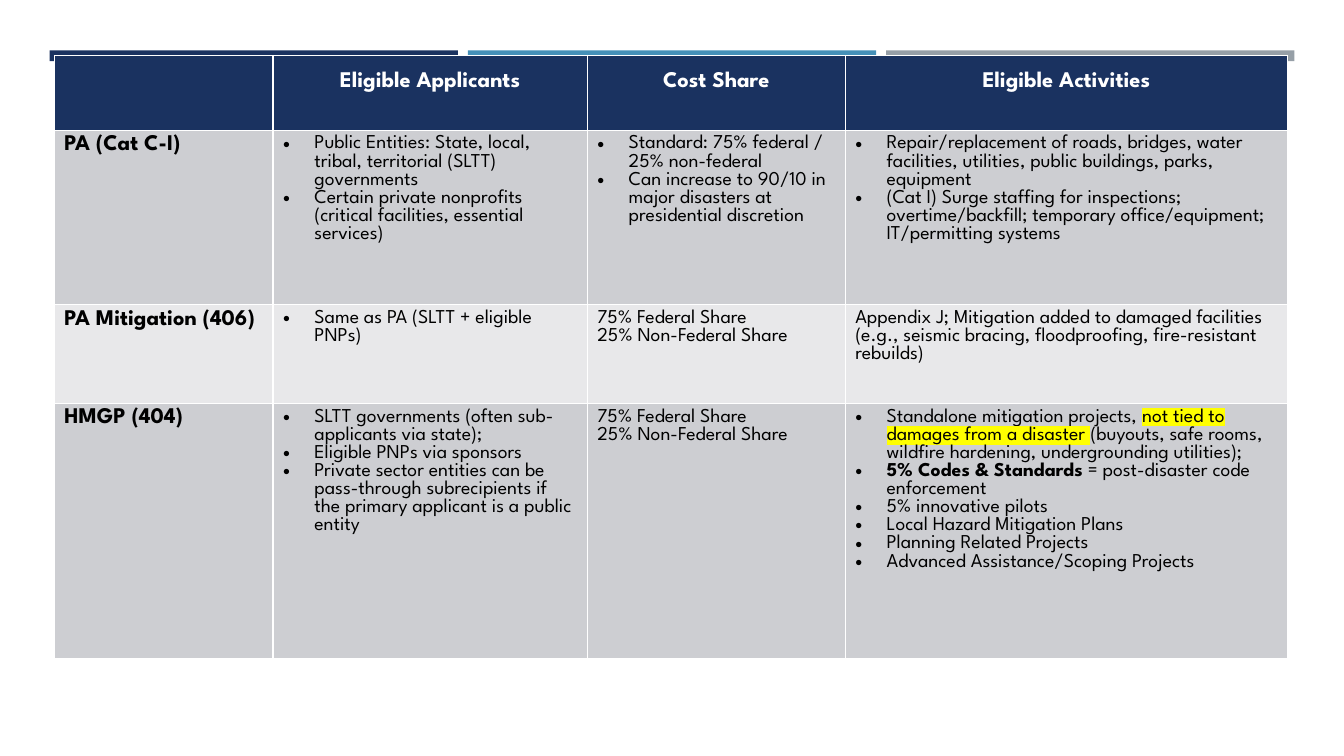
from lxml import etree
from pptx import Presentation
from pptx.dml.color import RGBColor
from pptx.enum import shapes, text
from pptx.oxml import ns
from pptx.util import Cm, Pt

NAVY = RGBColor(0x1A, 0x32, 0x60)
BLUE = RGBColor(0x45, 0x90, 0xB8)
GREY = RGBColor(0x96, 0x9F, 0xA7)
DARK = RGBColor(0xCD, 0xCE, 0xD2)
LIGHT = RGBColor(0xE8, 0xE8, 0xEA)
BLACK = RGBColor(0, 0, 0)
WHITE = RGBColor(255, 255, 255)
YELLOW = RGBColor(255, 255, 0)
FACE = "League Spartan"

HEAD = {"name": FACE, "size": Pt(16), "bold": True}
BODY = {"name": FACE, "size": Pt(14), "bold": False}


def add_run(para, words, form, color, mark=None):
    run = para.add_run()
    run.text = words
    for key, value in form.items():
        setattr(run.font, key, value)
    run.font.color.rgb = color
    if mark:
        light = etree.Element(ns.qn("a:highlight"))
        etree.SubElement(light, ns.qn("a:srgbClr"), val=str(mark))
        run.font._element.find(ns.qn("a:solidFill")).addnext(light)


def add_bullet(para):
    props = para._p.get_or_add_pPr()
    props.set("marL", str(Cm(0.79)))
    props.set("indent", str(-Cm(0.79)))
    etree.SubElement(props, ns.qn("a:buFont"), typeface="Arial")
    etree.SubElement(props, ns.qn("a:buChar"), char="•")


deck = Presentation()
deck.slide_width, deck.slide_height = Cm(33.87), Cm(19.05)
slide = deck.slides.add_slide(deck.slide_layouts[6])

# Bars along the top
for i, color in enumerate([NAVY, BLUE, GREY]):
    bar = slide.shapes.add_shape(
        shapes.MSO_SHAPE.RECTANGLE,
        Cm(1.25 + 10.54 * i), Cm(1.27), Cm(10.29), Cm(0.27))
    bar.shadow.inherit = False
    bar.fill.solid()
    bar.fill.fore_color.rgb = color
    bar.line.fill.background()

# Table content: a leading bullet marks a list item, a list holds styled runs
SHARE = ["75% Federal Share", "25% Non-Federal Share"]
TITLES = ["", "Eligible Applicants", "Cost Share", "Eligible Activities"]
ROWS = [
    ("PA (Cat C-I)",
     ["•Public Entities: State, local, tribal, territorial (SLTT) governments",
      "•Certain private nonprofits (critical facilities, essential services)"],
     ["•Standard: 75% federal / 25% non-federal",
      "•Can increase to 90/10 in major disasters at presidential discretion"],
     ["•Repair/replacement of roads, bridges, water facilities, utilities, "
      "public buildings, parks, equipment",
      "•(Cat I) Surge staffing for inspections; overtime/backfill; "
      "temporary office/equipment; IT/permitting systems"]),
    ("PA Mitigation (406)",
     ["•Same as PA (SLTT + eligible PNPs)"],
     SHARE,
     ["Appendix J; Mitigation added to damaged facilities (e.g., seismic "
      "bracing, floodproofing, fire-resistant rebuilds)"]),
    ("HMGP (404)",
     ["•SLTT governments (often sub-applicants via state);",
      "•Eligible PNPs via sponsors",
      "•Private sector entities can be pass-through subrecipients if the "
      "primary applicant is a public entity"],
     SHARE,
     [[("•Standalone mitigation projects, ", False, None),
       ("not tied to damages from a disaster ", False, YELLOW),
       ("(buyouts, safe rooms, wildfire hardening, undergrounding utilities);",
        False, None)],
      [("•5% Codes & Standards", True, None),
       (" = post-disaster code enforcement", False, None)],
      "•5% innovative pilots",
      "•Local Hazard Mitigation Plans",
      "•Planning Related Projects",
      "•Advanced Assistance/Scoping Projects"]),
]

# Table grid
wide = [5.51, 7.92, 6.5, 11.15]
high = [1.88, 4.39, 2.49, 6.43]
grid = slide.shapes.add_table(
    4, 4, Cm(1.37), Cm(1.4), Cm(sum(wide)), Cm(sum(high))).table
for col, size in zip(grid.columns, wide):
    col.width = Cm(size)
for row, size in zip(grid.rows, high):
    row.height = Cm(size)

# Header row
for c, title in enumerate(TITLES):
    cell = grid.cell(0, c)
    cell.fill.solid()
    cell.fill.fore_color.rgb = NAVY
    cell.vertical_anchor = text.MSO_ANCHOR.MIDDLE
    cell.margin_bottom = Cm(0.69)
    if title:
        para = cell.text_frame.paragraphs[0]
        para.alignment = text.PP_ALIGN.CENTER
        add_run(para, title, HEAD, WHITE)

# Body rows
for r, (name, *cells) in enumerate(ROWS, 1):
    for c, items in enumerate([[name], *cells]):
        cell = grid.cell(r, c)
        cell.fill.solid()
        cell.fill.fore_color.rgb = DARK if r % 2 else LIGHT
        frame = cell.text_frame
        for i, item in enumerate(items):
            para = frame.add_paragraph() if i else frame.paragraphs[0]
            runs = [(item, c == 0, None)] if isinstance(item, str) else item
            if runs[0][0].startswith("•"):
                add_bullet(para)
            for words, bold, mark in runs:
                form = {**(BODY if c else HEAD), "bold": bold}
                add_run(para, words.lstrip("•"), form, BLACK, mark)

deck.save("out.pptx")
